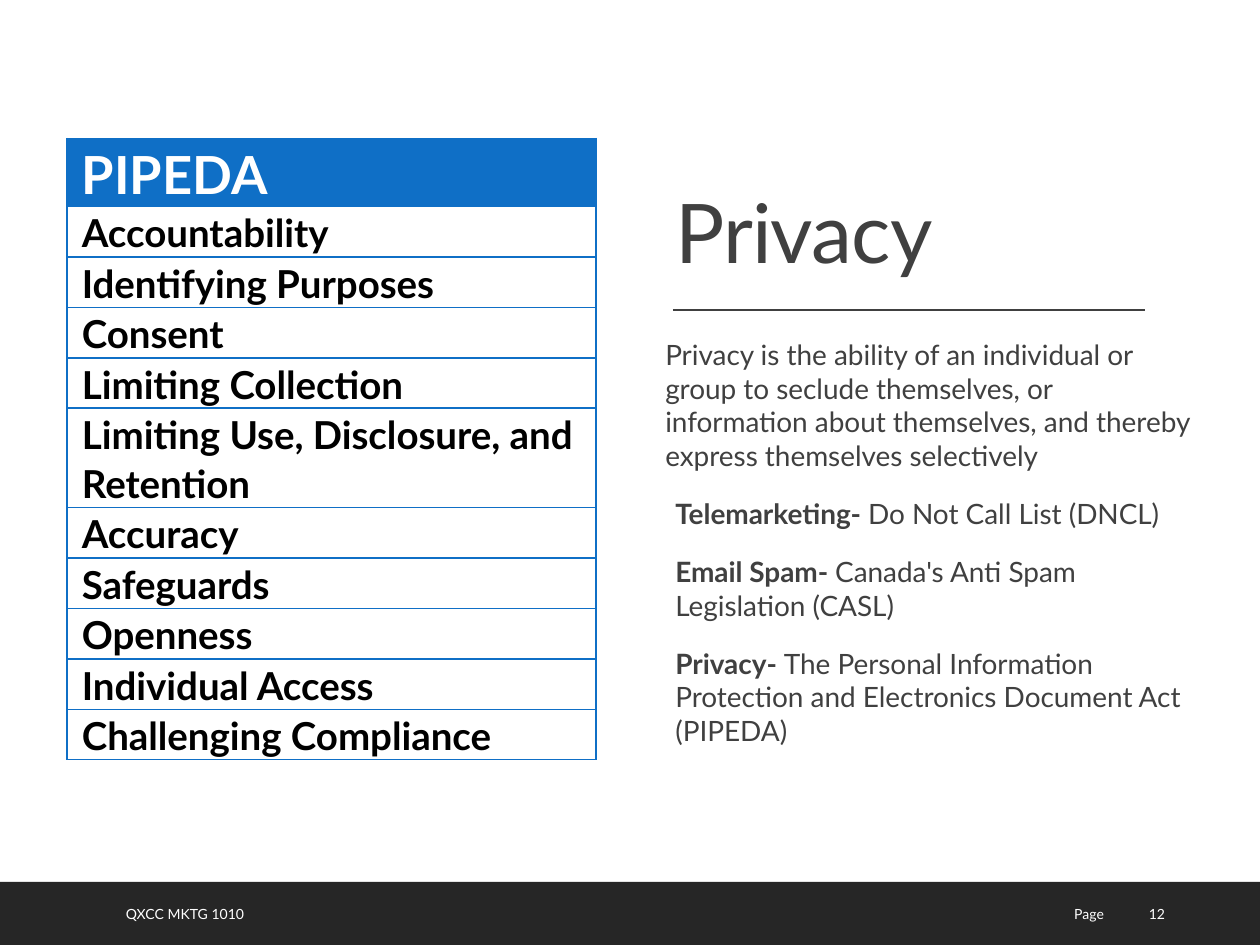
from lxml.etree import SubElement
from pptx import Presentation
from pptx.dml.color import RGBColor
from pptx.enum.shapes import MSO_CONNECTOR, MSO_SHAPE
from pptx.enum.text import MSO_ANCHOR, MSO_AUTO_SIZE, PP_ALIGN
from pptx.oxml.ns import qn
from pptx.util import Inches, Pt

FONT = "Lato"
BLUE, GREY, DARK, WHITE, BLACK = "0F6FC6", "404040", "262626", "FFFFFF", "000000"

PRINCIPLES = [
    "Accountability",
    "Identifying Purposes",
    "Consent",
    "Limiting Collection",
    "Limiting Use, Disclosure, and Retention",
    "Accuracy",
    "Safeguards",
    "Openness",
    "Individual Access",
    "Challenging Compliance",
]
DEFINITION = (
    "Privacy is the ability of an individual or group to seclude themselves, "
    "or information about themselves, and thereby express themselves selectively"
)
LAWS = [
    ("Telemarketing- ", "Do Not Call List (DNCL)"),
    ("Email Spam- ", "Canada's Anti Spam Legislation (CASL)"),
    ("Privacy- ", "The Personal Information Protection and Electronics Document Act (PIPEDA)"),
]
FOOTER = [
    ("QXCC MKTG 1010", 0.9, 5.59, PP_ALIGN.LEFT),
    ("Page", 6.74, 2.12, PP_ALIGN.RIGHT),
    ("12", 9.02, 0.64, PP_ALIGN.LEFT),
]


def color(value):
    """Turn a hex string into a colour."""
    return RGBColor.from_string(value)


def add_span(para, text, size, fill, bold=False):
    """Add one formatted run to a paragraph."""
    span = para.add_run()
    span.text = text
    span.font.name = FONT
    span.font.size = Pt(size)
    span.font.bold = bold
    span.font.color.rgb = color(fill)
    return span


def add_text_box(page, left, top, width, height):
    """Add a wrapping text box and return its text frame."""
    box = page.shapes.add_textbox(Inches(left), Inches(top), Inches(width), Inches(height))
    box.text_frame.word_wrap = True
    return box.text_frame


def add_title(page, text):
    """Place and format the title placeholder."""
    title = page.shapes.title
    title.left, title.top = Inches(5.26), Inches(0.69)
    title.width, title.height = Inches(4.21), Inches(1.59)
    frame = title.text_frame
    frame.auto_size = MSO_AUTO_SIZE.NONE
    frame.vertical_anchor = MSO_ANCHOR.BOTTOM
    para = frame.paragraphs[0]
    para.alignment = PP_ALIGN.LEFT
    para.line_spacing = 0.9
    span = add_span(para, text, 47, GREY)
    span.font._element.set("spc", "-50")


def add_rule(page):
    """Draw the thin line under the title."""
    rule = page.shapes.add_connector(
        MSO_CONNECTOR.STRAIGHT, Inches(5.34), Inches(2.46), Inches(9.09), Inches(2.46)
    )
    rule.line.color.rgb = color(GREY)
    rule.line.width = Pt(1)
    SubElement(rule._element.spPr, qn("a:effectLst"))


def add_body(page):
    """Write the definition and the laws below the title."""
    frame = add_text_box(page, 5.26, 2.63, 4.21, 3.79)
    frame.margin_left = frame.margin_right = 0
    entries = [("", DEFINITION, 0.02)] + [(name, law, 0.1) for name, law in LAWS]
    for index, (name, text, indent) in enumerate(entries):
        para = frame.add_paragraph() if index else frame.paragraphs[0]
        para.space_before, para.space_after = Pt(12), Pt(2)
        para._p.get_or_add_pPr().set("marL", str(Inches(indent)))
        if name:
            add_span(para, name, 16, GREY, bold=True)
        add_span(para, text, 16, GREY)


def add_borders(cell):
    """Give a cell a thin blue line on every side."""
    properties = cell._tc.get_or_add_tcPr()
    for side in ("lnL", "lnR", "lnT", "lnB"):
        border = SubElement(properties, qn(f"a:{side}"), w=str(Pt(1)))
        fill = SubElement(border, qn("a:solidFill"))
        SubElement(fill, qn("a:srgbClr"), val=BLUE)


def fill_cell(cell, text, size, ink, back):
    """Format one table cell and write its text."""
    cell.margin_left = cell.margin_right = Inches(0.12)
    cell.margin_top = cell.margin_bottom = 0
    add_borders(cell)
    cell.fill.solid()
    cell.fill.fore_color.rgb = color(back)
    para = cell.text_frame.paragraphs[0]
    para.line_spacing = 1.07
    add_span(para, text, size, ink, bold=True)


def add_principles_table(page):
    """Add the one-column table of privacy principles."""
    heights = [0.54] + [0.4] * 4 + [0.79] + [0.4] * 5
    table = page.shapes.add_table(
        len(heights), 1, Inches(0.53), Inches(1.1), Inches(4.2), Inches(sum(heights))
    ).table
    for row, height in zip(table.rows, heights):
        row.height = Inches(height)
    fill_cell(table.cell(0, 0), "PIPEDA", 30, WHITE, BLUE)
    for index, principle in enumerate(PRINCIPLES, start=1):
        fill_cell(table.cell(index, 0), principle, 22, BLACK, WHITE)


def add_footer(page):
    """Draw the dark footer band and its texts."""
    band = page.shapes.add_shape(
        MSO_SHAPE.RECTANGLE, 0, Inches(7), Inches(10), Inches(0.5)
    )
    band.shadow.inherit = False
    band.fill.solid()
    band.fill.fore_color.rgb = color(DARK)
    band.line.fill.background()
    for text, left, width, alignment in FOOTER:
        frame = add_text_box(page, left, 7.05, width, 0.4)
        frame.vertical_anchor = MSO_ANCHOR.MIDDLE
        para = frame.paragraphs[0]
        para.alignment = alignment
        para.space_after = Pt(6)
        add_span(para, text, 8, WHITE)


def main():
    """Build the privacy slide and save it."""
    deck = Presentation()
    deck.slide_width, deck.slide_height = Inches(10), Inches(7.5)
    page = deck.slides.add_slide(deck.slide_layouts[5])
    add_title(page, "Privacy")
    add_rule(page)
    add_body(page)
    add_footer(page)
    add_principles_table(page)
    deck.save("out.pptx")


if __name__ == "__main__":
    main()
